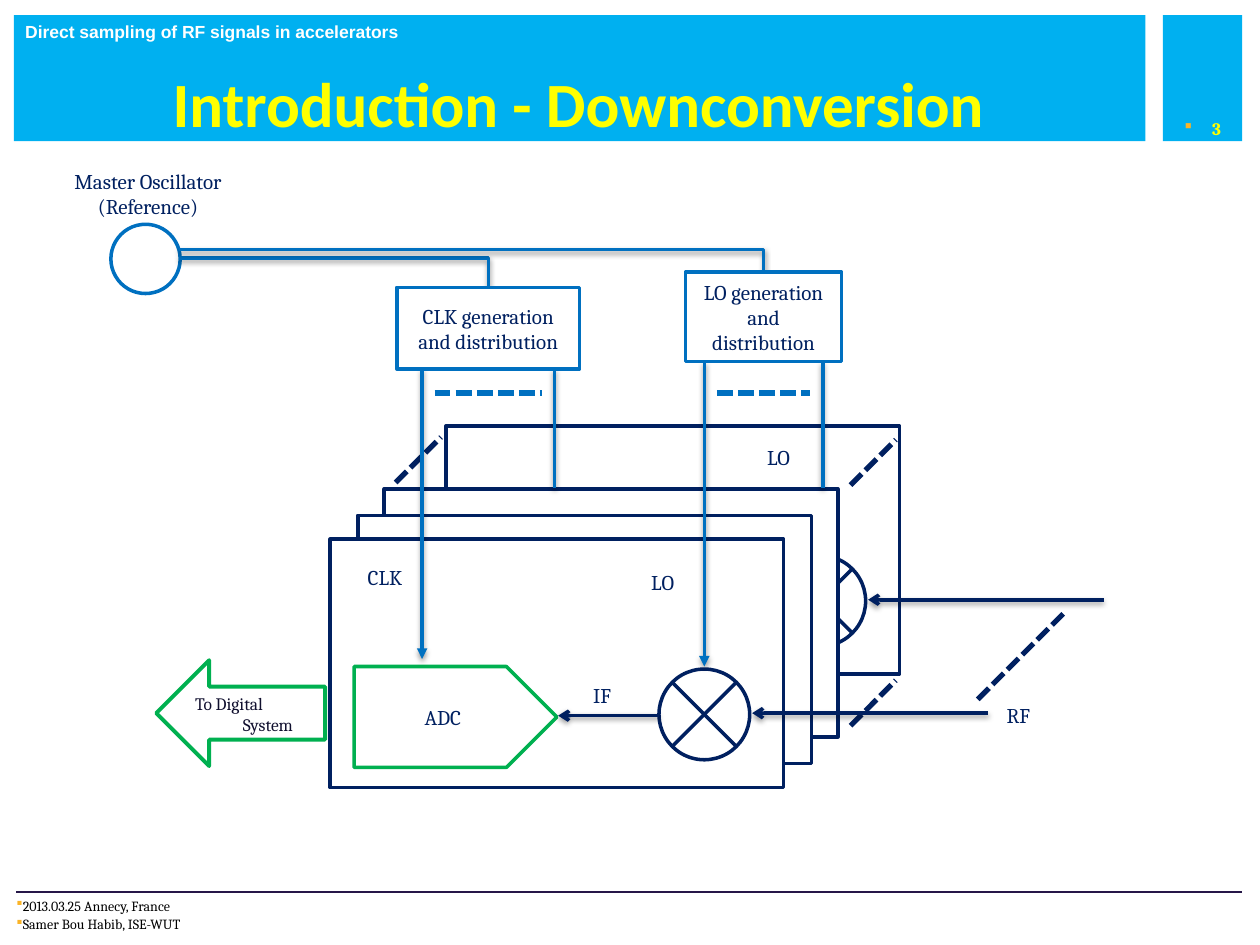
from lxml import etree
from pptx import Presentation
from pptx.dml.color import RGBColor
from pptx.enum import dml, shapes, text
from pptx.oxml import ns
from pptx.util import Inches, Pt

COLORS = {
    "sky": "00B0F0", "yellow": "FFFF00", "white": "FFFFFF", "black": "000000",
    "navy": "002060", "blue": "0070C0", "green": "00B050", "ink": "100F2E",
    "rule": "261748", "bullet": "FBB427",
}
MSO = shapes.MSO_SHAPE
CARD_W, CARD_H = 3.6, 1.97


def color(name):
    return RGBColor.from_string(COLORS[name])


def sub(parent, tag, **attrs):
    e = etree.SubElement(parent, ns.qn(tag))
    for key, value in attrs.items():
        e.set(key, str(value))
    return e


def write(sp, lines, size=12, font="Cambria", fill="navy", bold=False, align="l",
          anchor="t", ins=(0.1, 0.05, 0.1, 0.05), spacing=None, bullet=False, hang=0):
    tf = sp.text_frame
    tf.word_wrap = True
    tf.vertical_anchor = {"t": text.MSO_ANCHOR.TOP, "m": text.MSO_ANCHOR.MIDDLE,
                          "b": text.MSO_ANCHOR.BOTTOM}[anchor]
    tf.margin_left, tf.margin_top, tf.margin_right, tf.margin_bottom = map(Inches, ins)
    for i, line in enumerate(lines.split("\n")):
        p = tf.add_paragraph() if i else tf.paragraphs[0]
        p.alignment = {"l": text.PP_ALIGN.LEFT, "c": text.PP_ALIGN.CENTER}[align]
        if spacing:
            p.line_spacing = spacing
        pPr = p._p.get_or_add_pPr()
        pPr.set("marL", str(Inches(hang)))
        pPr.set("indent", str(-Inches(hang)))
        if bullet:
            sub(sub(pPr, "a:buClr"), "a:srgbClr", val=COLORS["bullet"])
            sub(pPr, "a:buFont", typeface="Wingdings")
            sub(pPr, "a:buChar", char="§")
        r = p.add_run()
        r.text = line
        r.font.size, r.font.name, r.font.bold = Pt(size), font, bold
        r.font.color.rgb = color(fill)


def label(s, x, y, w, h, lines, **fmt):
    write(s.shapes.add_textbox(Inches(x), Inches(y), Inches(w), Inches(h)), lines, **fmt)


def shape(s, kind, x, y, w, h, fill=None, line=None, width=2):
    sp = s.shapes.add_shape(kind, Inches(x), Inches(y), Inches(w), Inches(h))
    sp.shadow.inherit = False
    if fill:
        sp.fill.solid()
        sp.fill.fore_color.rgb = color(fill)
    else:
        sp.fill.background()
    if line:
        sp.line.color.rgb = color(line)
        sp.line.width = Pt(width)
    else:
        sp.line.fill.background()
    return sp


def connect(s, x1, y1, x2, y2, line, width=2, head=None, shadow=True, dotted=False,
            kind=shapes.MSO_CONNECTOR.STRAIGHT):
    c = s.shapes.add_connector(kind, Inches(x1), Inches(y1), Inches(x2), Inches(y2))
    c.line.color.rgb = color(line)
    c.line.width = Pt(width)
    if dotted:
        c.line.dash_style = dml.MSO_LINE.SQUARE_DOT
    if head:
        sub(c.line._get_or_add_ln(), "a:tailEnd", type=head)
    effects = sub(c._element.spPr, "a:effectLst")
    if shadow:
        outer = sub(effects, "a:outerShdw", blurRad=Pt(3.1), dist=Pt(1.6),
                    dir=5400000, rotWithShape=0)
        sub(sub(outer, "a:srgbClr", val=COLORS["black"]), "a:alpha", val=38000)
    return c


def dots(s, x1, y1, x2, y2, line):
    connect(s, x1, y1, x2, y2, line, width=3, shadow=False, dotted=True)


def elbow(s, x1, y1, x2, y2, line):
    cx, cy, w, h = (x1 + x2) / 2, (y1 + y2) / 2, x1 - x2, y1 - y2
    c = connect(s, cx - h / 2, cy + w / 2, cx + h / 2, cy - w / 2, line,
                kind=shapes.MSO_CONNECTOR.ELBOW)
    spPr = c._element.spPr
    spPr.find(ns.qn("a:xfrm")).set("rot", "16200000")
    spPr.find(ns.qn("a:prstGeom")).set("prst", "bentConnector2")


def header(s, x, y, w, h):
    shape(s, MSO.RECTANGLE, x, y, w, h, fill="sky")
    label(s, x, y, w - 0.8, 0.21, "Direct sampling of RF signals in accelerators", size=10,
          font="Arial", fill="white", bold=True, anchor="b", ins=(0.09, 0, 0.05, 0), spacing=1.1)
    label(s, x, y + 0.19, w, 0.95, "Introduction - Downconversion", size=36, font="Calibri",
          fill="yellow", bold=True, align="c", anchor="m", ins=(0.08, 0.05, 0.1, 0))
    number = shape(s, MSO.RECTANGLE, x + w + 0.14, y, 0.63, h, fill="sky")
    write(number, "3", size=10, fill="yellow", bold=True, align="c", anchor="b",
          ins=(0.06, 0.05, 0.06, 0.02), bullet=True, hang=0.22)


def footer(s, x, y, w):
    connect(s, x, y, x + w, y, "rule", width=1, shadow=False)
    label(s, x, y + 0.03, 6.24, 0.29, "2013.03.25 Annecy, France\nSamer Bou Habib, ISE-WUT",
          size=8, fill="black", anchor="b", ins=(0, 0, 0, 0), spacing=1.1, bullet=True)


def oscillator(s, x, y):
    shape(s, MSO.OVAL, x + 0.49, y + 0.49, 0.55, 0.55, line="blue")
    label(s, x, y, 1.57, 0.5, "Master Oscillator (Reference)", align="c")


def card(s, x, y):
    shape(s, MSO.RECTANGLE, x, y, CARD_W, CARD_H, fill="white", line="navy")


def channel(s, x, y, lo_y):
    card(s, x, y)
    shape(s, MSO.FLOWCHART_SUMMING_JUNCTION, x + 2.61, y + 1.03, 0.72, 0.72, line="navy")
    label(s, x + 2.45, y + lo_y, 1.26, 0.3, "LO")
    connect(s, x + 5.22, y + 1.38, x + 3.35, y + 1.38, "navy", head="arrow")


def channel_stack(s, x, y):
    channel(s, x + 0.92, y - 0.9, 0.1)
    for dx, dy in ((0.43, -0.4), (0.22, -0.19)):
        card(s, x + dx, y + dy)
    for dx, dy, size in ((4.13, 1.48, 0.36), (4.13, -0.43, 0.36),
                         (0.52, -0.45, 0.36), (5.14, 1.27, 0.68)):
        dots(s, x + dx, y + dy, x + dx + size, y + dy - size, "navy")
    channel(s, x, y, 0.19)
    adc = shape(s, MSO.PENTAGON, x + 0.19, y + 1.01, 1.61, 0.8, fill="white", line="green")
    write(adc, "ADC", align="c", anchor="m")
    connect(s, x + 2.61, y + 1.4, x + 1.81, y + 1.4, "navy", head="arrow")
    label(s, x + 5.27, y + 1.25, 0.48, 0.3, "RF")
    label(s, x + 1.99, y + 1.09, 1.26, 0.3, "IF")
    label(s, x + 0.2, y + 0.15, 1.26, 0.3, "CLK")
    output = shape(s, MSO.LEFT_ARROW, x - 1.38, y + 0.96, 1.34, 0.84, line="green", width=2.25)
    write(output, "To Digital System", size=10, fill="ink", hang=0.38)


def distribution(s, x, y, w, h, name, feed_y, inset, arrow_end):
    left, right, bottom = x + inset, x + w - inset, y + h
    connect(s, right, bottom, right, 3.87, "blue")
    elbow(s, x + w / 2, y, 1.42, feed_y, "blue")
    dots(s, left + 0.1, 3.12, right - 0.1, 3.12, "blue")
    connect(s, left, bottom, left, arrow_end, "blue", head="triangle")
    box = shape(s, MSO.RECTANGLE, x, y, w, h, fill="white", line="blue")
    write(box, f"{name} generation and distribution", align="c", anchor="m")


def main():
    prs = Presentation()
    prs.slide_width, prs.slide_height = Inches(10), Inches(7.5)
    s = prs.slides.add_slide(prs.slide_layouts[6])
    header(s, 0.11, 0.12, 8.98, 1)
    footer(s, 0.13, 7.08, 9.73)
    oscillator(s, 0.39, 1.29)
    channel_stack(s, 2.62, 4.28)
    distribution(s, 3.15, 2.28, 1.45, 0.65, "CLK", 2.05, 0.2, 5.23)
    distribution(s, 5.44, 2.16, 1.24, 0.71, "LO", 1.98, 0.15, 5.29)
    prs.save("out.pptx")


if __name__ == "__main__":
    main()
